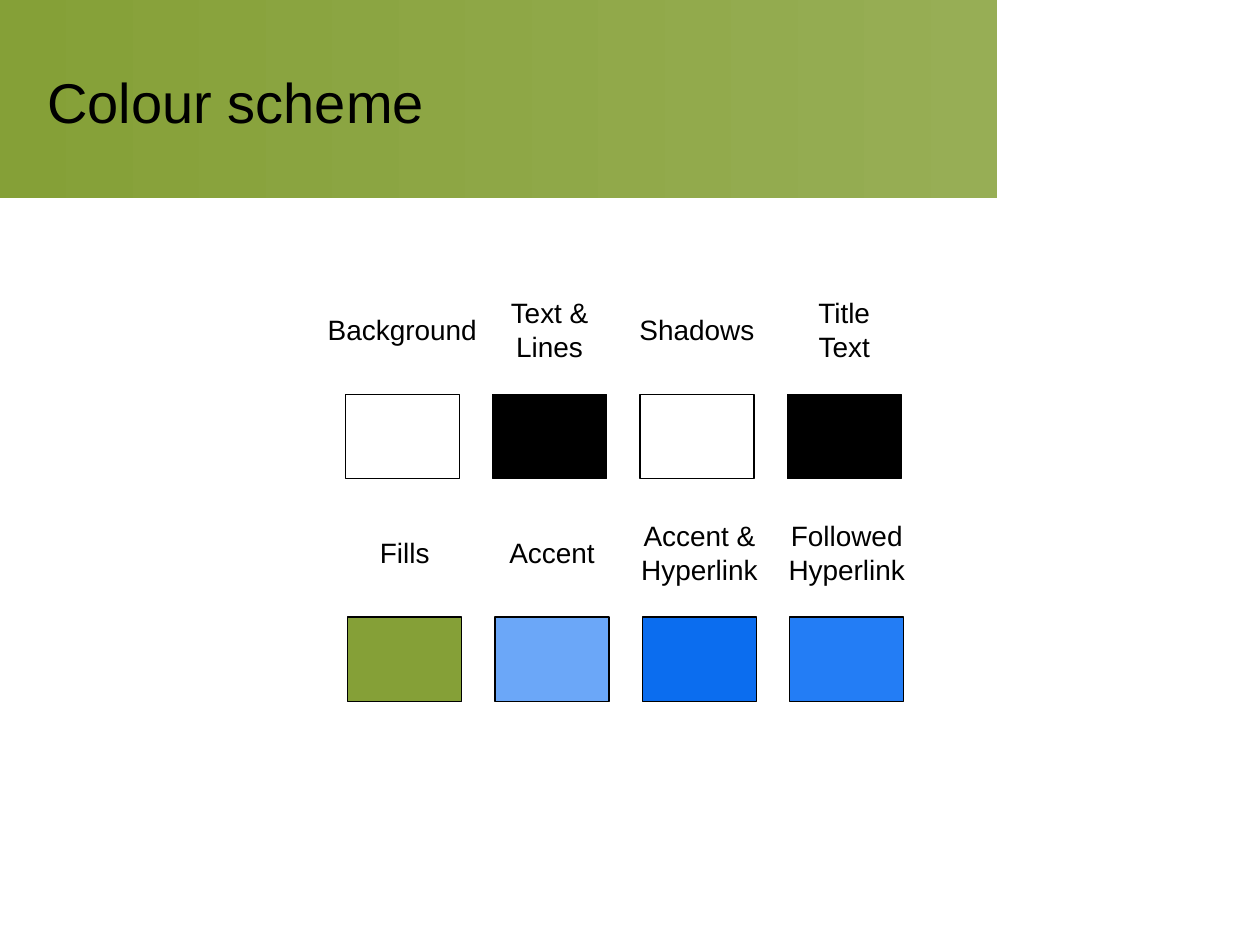
from pptx import Presentation
from pptx.dml.color import RGBColor
from pptx.enum.shapes import MSO_SHAPE
from pptx.enum.text import MSO_ANCHOR, PP_ALIGN
from pptx.util import Cm, Pt

RECT = MSO_SHAPE.RECTANGLE
MIDDLE = MSO_ANCHOR.MIDDLE
LEFT, CENTER = PP_ALIGN.LEFT, PP_ALIGN.CENTER

BLACK, WHITE, GREEN, PALE = "000000", "FFFFFF", "85A037", "97AE55"
WIDE, HIGH, STEP = 2.3, 1.7, 2.97
SPAN, TALL = 3.6, 1.63  # label box, wide enough for the longest word

# Left and top of each row, then its swatches; \v breaks a line in a paragraph
ROWS = [
    (6.96, 7.95, [("Background", WHITE), ("Text &\nLines", BLACK),
                  ("Shadows", WHITE), ("Title\vText", BLACK)]),
    (7.01, 12.44, [("Fills", GREEN), ("Accent", "6BA7F8"),
                   ("Accent &\nHyperlink", "0B6DEF"),
                   ("Followed\nHyperlink", "237DF5")]),
]


def color(code):
    return RGBColor.from_string(code)


def write(frame, text, size=16, align=CENTER, wrap=False, font="Arial", ink=BLACK):
    frame.text = text
    frame.word_wrap = wrap
    frame.vertical_anchor = MIDDLE
    for para in frame.paragraphs:
        para.alignment = align
        para.font.name = font
        para.font.size = Pt(size)
        para.font.color.rgb = color(ink)


class Sheet:
    """Holds the current slide and the style of its elements."""

    def __init__(self, slide, line=0.75):
        self.slide = slide
        self.line = line

    def rect(self, x, y, w, h):
        box = self.slide.shapes.add_shape(RECT, Cm(x), Cm(y), Cm(w), Cm(h))
        box.shadow.inherit = False
        return box

    def band(self, x, y, w, h, start, end):
        box = self.rect(x, y, w, h)
        box.line.fill.background()
        box.fill.gradient()
        box.fill.gradient_angle = 0
        for stop, code in zip(box.fill.gradient_stops, (start, end)):
            stop.color.rgb = color(code)
        # Keep the band behind the title
        tree = self.slide.shapes.element
        tree.remove(box.element)
        tree.insert(2, box.element)

    def title(self, text, x, y, w, h):
        head = self.slide.shapes.title
        head.left, head.top, head.width, head.height = Cm(x), Cm(y), Cm(w), Cm(h)
        write(head.text_frame, text, size=32, align=LEFT, wrap=True)

    def swatch(self, x, y, fill):
        box = self.rect(x, y, WIDE, HIGH)
        box.fill.solid()
        box.fill.fore_color.rgb = color(fill)
        box.line.color.rgb = color(BLACK)
        box.line.width = Pt(self.line)

    def label(self, text, mid, y):
        box = self.slide.shapes.add_textbox(
            Cm(mid - SPAN / 2), Cm(y), Cm(SPAN), Cm(TALL))
        write(box.text_frame, text)


def main():
    deck = Presentation()
    deck.slide_width, deck.slide_height = Cm(25.4), Cm(19.05)
    sheet = Sheet(deck.slides.add_slide(deck.slide_layouts[5]))
    sheet.band(0, 0, 20.1, 4, GREEN, PALE)
    sheet.title("Colour scheme", 0.7, 0.76, 19, 2.57)
    for left, top, items in ROWS:
        for col, (name, fill) in enumerate(items):
            x = left + col * STEP
            sheet.swatch(x, top, fill)
            sheet.label(name, x + WIDE / 2, top - 2.12)
    deck.save("out.pptx")


if __name__ == "__main__":
    main()
